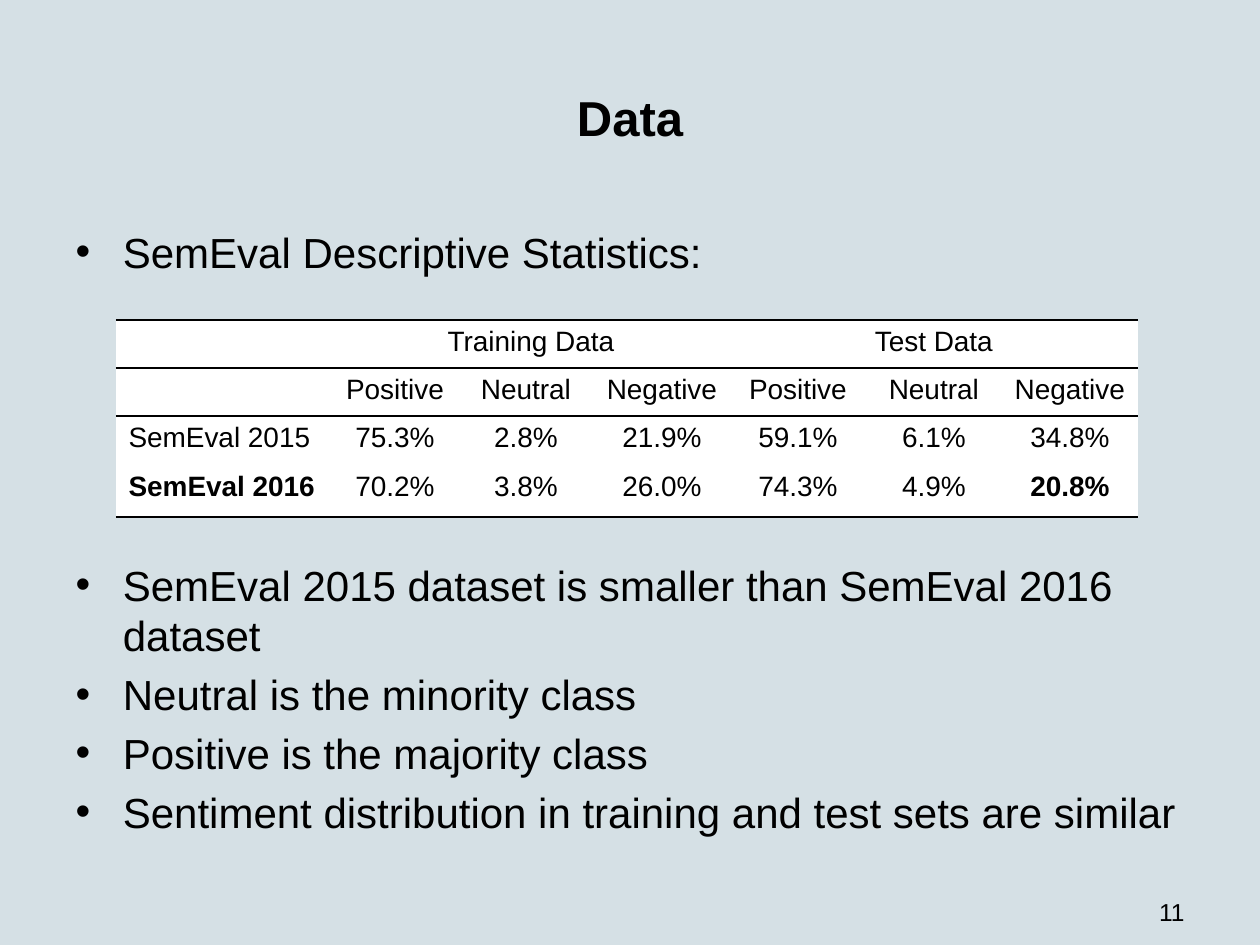
from lxml.etree import SubElement
from pptx import Presentation
from pptx.dml.color import RGBColor
from pptx.enum.text import MSO_ANCHOR as Anchor, MSO_AUTO_SIZE as AutoSize, PP_ALIGN as Align
from pptx.oxml.ns import qn
from pptx.util import Pt

PX = 914400 / 126
COLORS = {"bg": "D5E0E5", "text": "000000", "cell": "FFFFFF"}
NO_STYLE = "{2D5ABB26-0587-4C30-8999-92F81FD0307C}"


def write(p, text, size=24, bold=False, align=Align.LEFT, before=0, after=0):
    """Add one formatted run to a paragraph."""
    p.alignment = align
    p.space_before, p.space_after = Pt(before), Pt(after)
    r = p.add_run()
    r.text = text
    r.font.name = "Arial"
    r.font.size = Pt(size)
    r.font.bold = bold
    r.font.color.rgb = RGBColor.from_string(COLORS["text"])


def add_border(cell, side, width):
    """Draw a solid line on one side of a cell: "lnT" or "lnB"."""
    ln = SubElement(cell._tc.get_or_add_tcPr(), qn(f"a:{side}"), w=str(Pt(width)))
    fill = SubElement(ln, qn("a:solidFill"))
    SubElement(fill, qn("a:srgbClr"), val=COLORS["text"])


prs = Presentation()
prs.slide_width, prs.slide_height = round(1260 * PX), round(945 * PX)
s = prs.slides.add_slide(prs.slide_layouts[1])
s.background.fill.solid()
s.background.fill.fore_color.rgb = RGBColor.from_string(COLORS["bg"])

# Title and bullets
title, body = s.placeholders
for sp, box in ((title, (63, 38, 1134, 157)), (body, (63, 220, 1134, 624))):
    sp.left, sp.top, sp.width, sp.height = [round(v * PX) for v in box]
    sp.text_frame.auto_size = AutoSize.NONE
title.text_frame.vertical_anchor = Anchor.MIDDLE
write(title.text_frame.paragraphs[0], "Data", size=28, bold=True, align=Align.CENTER)

# The second bullet leaves room above it for the table
bullets = [
    ("SemEval Descriptive Statistics:", 2.4),
    ("SemEval 2015 dataset is smaller than SemEval 2016 dataset", 159),
    ("Neutral is the minority class", 2.4),
    ("Positive is the majority class", 2.4),
    ("Sentiment distribution in training and test sets are similar", 2.4),
]
tf = body.text_frame
for i, (text, before) in enumerate(bullets):
    p = tf.add_paragraph() if i else tf.paragraphs[0]
    write(p, text, before=before, after=2.4)

# Statistics table
classes = ["Positive", "Neutral", "Negative"]
rows = [
    ["", "Training Data", "", "", "Test Data", "", ""],
    ["", *classes, *classes],
    ["SemEval 2015", "75.3%", "2.8%", "21.9%", "59.1%", "6.1%", "34.8%"],
    ["SemEval 2016", "70.2%", "3.8%", "26.0%", "74.3%", "4.9%", "20.8%"],
]
bold_cells = {(3, 0), (3, 6)}
borders = {0: [("lnT", 1.5), ("lnB", 1)], 1: [("lnT", 1)], 3: [("lnB", 1.5)]}
col_widths = [216, 126] + [136] * 5
row_heights = [48, 48, 49, 52]

frame = s.shapes.add_table(len(rows), len(col_widths), round(116 * PX), round(320 * PX),
                           round(sum(col_widths) * PX), round(sum(row_heights) * PX))
table = frame.table
table.first_row = table.horz_banding = False
table._tbl.tblPr.find(qn("a:tableStyleId")).text = NO_STYLE
for col, width in zip(table.columns, col_widths):
    col.width = round(width * PX)
for row, height in zip(table.rows, row_heights):
    row.height = round(height * PX)
for first in (1, 4):
    table.cell(0, first).merge(table.cell(0, first + 2))

for i, row in enumerate(rows):
    for j, text in enumerate(row):
        cell = table.cell(i, j)
        write(cell.text_frame.paragraphs[0], text, size=16, bold=(i, j) in bold_cells,
              align=Align.CENTER if j else Align.LEFT)
        for side, width in borders.get(i, []):
            add_border(cell, side, width)
        cell.fill.solid()
        cell.fill.fore_color.rgb = RGBColor.from_string(COLORS["cell"])

# Slide number
number = s.shapes.add_textbox(*[round(v * PX) for v in (903, 891, 294, 40)])
number.text_frame.word_wrap = True
write(number.text_frame.paragraphs[0], "11", size=14, align=Align.RIGHT)

prs.save("out.pptx")
